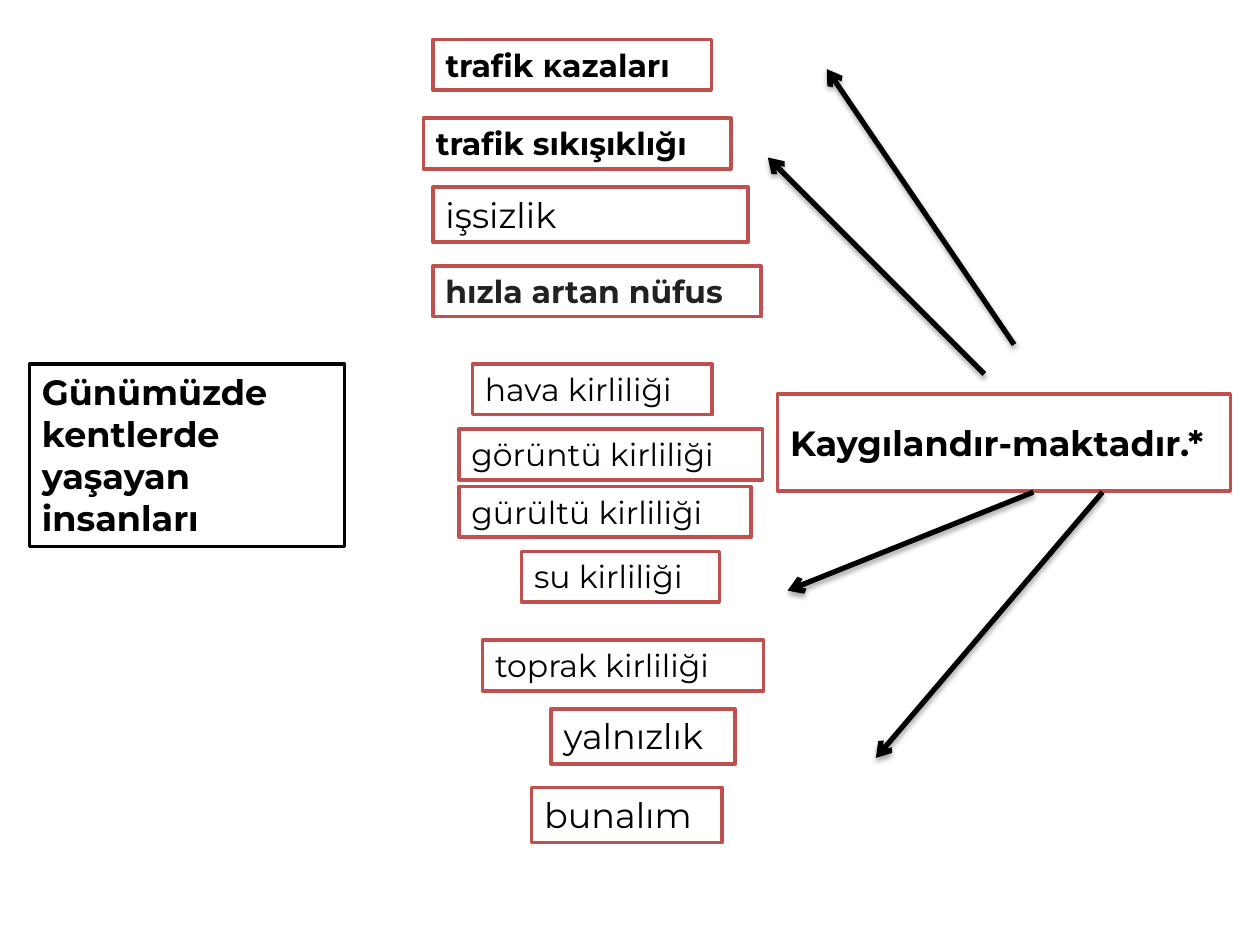
from pptx import Presentation
from pptx.dml.color import RGBColor
from pptx.enum.shapes import MSO_CONNECTOR, MSO_SHAPE
from pptx.enum.text import MSO_ANCHOR, MSO_AUTO_SIZE, PP_ALIGN
from pptx.oxml import parse_xml
from pptx.oxml.ns import nsdecls
from pptx.util import Pt

RECTANGLE = MSO_SHAPE.RECTANGLE
STRAIGHT = MSO_CONNECTOR.STRAIGHT
TOP, MIDDLE = MSO_ANCHOR.TOP, MSO_ANCHOR.MIDDLE
GROW = MSO_AUTO_SIZE.SHAPE_TO_FIT_TEXT
LEFT, JUSTIFY = PP_ALIGN.LEFT, PP_ALIGN.JUSTIFY

FONT = "Montserrat"
BLACK, WHITE, RED, CHARCOAL = "000000", "FFFFFF", "C0504D", "222222"
BOX_HEIGHTS = {18: 29, 20: 31.5}

PROBLEMS = [
    ("trafik κazaları", 247.5, 22.5, 159, {"bold": True}),
    ("trafik sıkışıklığı", 242, 67.5, 175.7, {"bold": True}),
    ("işsizlik ", 247.5, 106.9, 180, {"size": 20, "align": JUSTIFY, "wrap": True}),
    ("hızla artan nüfus ", 247.5, 152, 187.3,
     {"bold": True, "color": CHARCOAL, "align": JUSTIFY}),
    ("hava kirliliği", 270, 208, 137, {}),
    ("görüntü kirliliği", 262.2, 245.2, 173.5, {}),
    ("gürültü kirliliği", 262.2, 278, 167, {}),
    ("su kirliliği", 298.1, 315, 113, {}),
    ("toprak kirliliği", 275.8, 365.8, 160.6, {}),
    ("yalnızlık", 315, 405, 105, {"size": 20}),
    ("bunalım", 303.8, 450, 108.7, {"size": 20}),
]

ARROWS = [
    (579.5, 196.9, 472.5, 39.5),
    (562.5, 213.75, 438.75, 90),
    (590.5, 281.25, 450, 337.5),
    (630, 281.25, 500.5, 433.1),
]


def rgb(value):
    return RGBColor.from_string(value)


def write_text(shape, text, size=18, bold=False, color=BLACK, align=LEFT,
               anchor=TOP, wrap=False):
    frame = shape.text_frame
    frame.word_wrap = wrap
    frame.auto_size = GROW
    frame.vertical_anchor = anchor
    paragraph = frame.paragraphs[0]
    paragraph.alignment = align
    run = paragraph.add_run()
    run.text = text
    run.font.name = FONT
    run.font.size = Pt(size)
    run.font.bold = bold
    run.font.color.rgb = rgb(color)


def add_box(slide, text, left, top, width, height, border=RED, **text_format):
    shape = slide.shapes.add_shape(
        RECTANGLE, Pt(left), Pt(top), Pt(width), Pt(height))
    shape.shadow.inherit = False
    shape.fill.solid()
    shape.fill.fore_color.rgb = rgb(WHITE)
    shape.line.color.rgb = rgb(border)
    shape.line.width = Pt(2)
    write_text(shape, text, **text_format)


def add_arrow(slide, start_x, start_y, end_x, end_y):
    connector = slide.shapes.add_connector(
        STRAIGHT, Pt(start_x), Pt(start_y), Pt(end_x), Pt(end_y))
    connector.line.color.rgb = rgb(BLACK)
    connector.line.width = Pt(3)
    connector.line._get_or_add_ln().append(
        parse_xml(f'<a:tailEnd {nsdecls("a")} type="arrow"/>'))
    connector._element.spPr.append(parse_xml(
        f'<a:effectLst {nsdecls("a")}>'
        f'<a:outerShdw blurRad="{Pt(3.1)}" dist="{Pt(1.8)}" dir="5400000" rotWithShape="0">'
        f'<a:srgbClr val="{BLACK}"><a:alpha val="35000"/></a:srgbClr>'
        '</a:outerShdw></a:effectLst>'))


def main():
    presentation = Presentation()
    presentation.slide_width = Pt(720)
    presentation.slide_height = Pt(540)
    slide = presentation.slides.add_slide(presentation.slide_layouts[6])

    statement = {"size": 20, "bold": True, "align": JUSTIFY, "wrap": True}
    add_box(slide, "Günümüzde kentlerde yaşayan insanları", 16.9, 208, 180, 104.4,
            border=BLACK, **statement)
    add_box(slide, "Kaygılandır-maktadır.*", 444.4, 225, 258.7, 55.7,
            anchor=MIDDLE, **statement)
    for text, left, top, width, text_format in PROBLEMS:
        height = BOX_HEIGHTS[text_format.get("size", 18)]
        add_box(slide, text, left, top, width, height, **text_format)
    for arrow in ARROWS:
        add_arrow(slide, *arrow)

    presentation.save("out.pptx")


if __name__ == "__main__":
    main()
